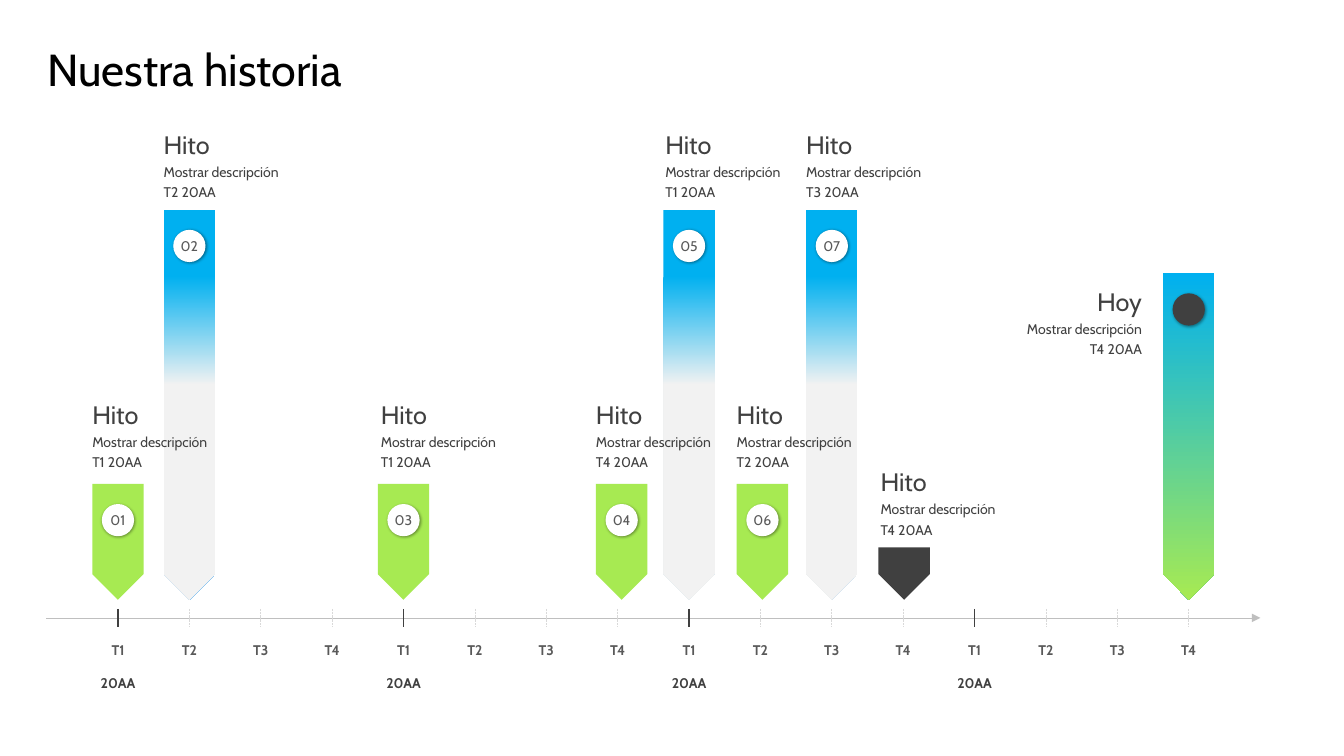
from dataclasses import dataclass

from lxml import etree
from pptx import Presentation
from pptx import util as u
from pptx.dml.color import RGBColor
from pptx.enum import dml, shapes, text
from pptx.oxml import ns


@dataclass(frozen=True)
class Theme:
    font: str = "Cabin"
    black: str = "000000"
    dark: str = "404040"
    grey: str = "595959"
    axis: str = "BFBFBF"
    tick: str = "D9D9D9"
    pale: str = "F2F2F2"
    white: str = "FFFFFF"
    blue: str = "00B0F0"
    green: str = "A7EA52"
    title: int = 32
    heading: int = 18
    body: int = 10


T = Theme()
LEFT, CENTER, RIGHT = text.PP_ALIGN.LEFT, text.PP_ALIGN.CENTER, text.PP_ALIGN.RIGHT

prs = Presentation()
prs.slide_width, prs.slide_height = u.Inches(13.33), u.Inches(7.5)
slide = prs.slides.add_slide(prs.slide_layouts[6])

# Time grid: one column per quarter
FIRST, STEP, QUARTERS = 1.17, 0.708, 16
AXIS_Y, TICK = 6.13, 0.09
ARROW_W, ARROW_TIP = 0.51, 5.95
DOT, DOT_DROP = 0.32, 0.2
LABEL_W = 1.42


def write(tf, words, size, color, align=LEFT, bold=False):
    """Fill a text frame with one run and no margins; returns its paragraph."""
    tf.margin_left = tf.margin_right = tf.margin_top = tf.margin_bottom = 0
    tf.word_wrap = True
    p = tf.paragraphs[0]
    p.alignment = align
    r = p.add_run()
    r.text = words
    r.font.name, r.font.size, r.font.bold = T.font, u.Pt(size), bold
    r.font.color.rgb = RGBColor.from_string(color)
    return p


def add_line(x1, y1, x2, y2, color, width):
    s = slide.shapes.add_connector(
        shapes.MSO_CONNECTOR.STRAIGHT, *map(u.Inches, (x1, y1, x2, y2)))
    s.line.color.rgb = RGBColor.from_string(color)
    s.line.width = u.Pt(width)
    etree.SubElement(s._element.spPr, ns.qn("a:effectLst"))
    return s


# Title
box = slide.shapes.add_textbox(*map(u.Inches, (0.47, 0.47, 12.4, 0.59)))
write(box.text_frame, "Nuestra historia", T.title, T.black).line_spacing = 0.9

# Axis, ticks and their captions
axis = add_line(0.46, AXIS_Y, 12.5, AXIS_Y, T.axis, 0.5)
etree.SubElement(axis.line._get_or_add_ln(), ns.qn("a:tailEnd"), type="triangle")

for quarter in range(QUARTERS):
    x = FIRST + quarter * STEP
    new_year = quarter % 4 == 0
    tick = add_line(x, AXIS_Y - TICK, x, AXIS_Y + TICK,
                    T.dark if new_year else T.tick, 1.25 if new_year else 0.5)
    captions = [(f"T{quarter % 4 + 1}", 6.36, T.grey)]
    if new_year:
        captions.append(("20AA", 6.69, T.dark))
    else:
        tick.line.dash_style = dml.MSO_LINE.SQUARE_DOT
    w = 0.62 if new_year else 0.45
    for words, y, color in captions:
        box = slide.shapes.add_textbox(*map(u.Inches, (x - w / 2, y, w, 0.26)))
        write(box.text_frame, words, T.body, color, CENTER, True)

# Arrow styles: top, label top, gradient stops (one stop is a solid fill)
STYLES = {
    "tall": (2.08, 1.28, [(0.17, T.blue), (0.45, T.pale)]),
    "short": (4.8, 3.96, [(0, T.green)]),
    "stub": (5.43, 4.63, [(0, T.dark)]),
    "today": (2.71, 2.84, [(0, T.blue), (1, T.green)]),
}
# Style, quarter, number, arrow nudge, label offset from the arrow
MILESTONES = [
    ("tall", 1, "02", 0, 0),
    ("short", 0, "01", 0, 0),
    ("short", 4, "03", 0, 0.03),
    ("tall", 8, "05", 0, 0.02),
    ("short", 7, "04", 0.04, 0),
    ("tall", 10, "07", 0, 0),
    ("short", 9, "06", 0.02, 0),
    ("stub", 11, None, 0.01, 0.02),
    ("today", 15, "", 0, -1.63),
]

for style, quarter, number, nudge, offset in MILESTONES:
    top, label_top, stops = STYLES[style]
    today = style == "today"
    center = FIRST + quarter * STEP + nudge
    left = center - ARROW_W / 2

    arrow = slide.shapes.add_shape(
        shapes.MSO_SHAPE.DOWN_ARROW,
        *map(u.Inches, (left, top, ARROW_W, ARROW_TIP - top)))
    arrow.adjustments[0], arrow.adjustments[1] = 1, 0.5
    arrow.line.fill.background()
    arrow.shadow.inherit = False
    if len(stops) == 1:
        arrow.fill.solid()
        arrow.fill.fore_color.rgb = RGBColor.from_string(stops[0][1])
    else:
        arrow.fill.gradient()
        arrow.fill.gradient_angle = 270
        for stop, (position, color) in zip(arrow.fill.gradient_stops, stops):
            stop.position = position
            stop.color.rgb = RGBColor.from_string(color)

    if number is not None:
        dot = slide.shapes.add_shape(
            shapes.MSO_SHAPE.OVAL,
            *map(u.Inches, (center - DOT / 2, top + DOT_DROP, DOT, DOT)))
        dot.fill.solid()
        dot.fill.fore_color.rgb = RGBColor.from_string(T.dark if today else T.white)
        dot.line.fill.background()
        dot.shadow.inherit = False
        effects = dot._element.spPr.find(ns.qn("a:effectLst"))
        shadow = etree.SubElement(
            effects, ns.qn("a:outerShdw"), blurRad=str(u.Pt(2)), dist=str(u.Pt(1)),
            dir=str(45 * 60000), algn="tl", rotWithShape="0")
        tint = etree.SubElement(shadow, ns.qn("a:srgbClr"), val=T.black)
        etree.SubElement(tint, ns.qn("a:alpha"), val="40000")
        if number:
            dot.text_frame.vertical_anchor = text.MSO_ANCHOR.MIDDLE
            write(dot.text_frame, number, T.body, T.grey, CENTER)

    label = [
        ("Hoy" if today else "Hito", 0, 0.3, T.heading),
        ("Mostrar descripción", 0.34, 0.17, T.body),
        (f"T{quarter % 4 + 1} 20AA", 0.54, 0.26, T.body),
    ]
    for words, drop, height, size in label:
        box = slide.shapes.add_textbox(
            *map(u.Inches, (left + offset, label_top + drop, LABEL_W, height)))
        write(box.text_frame, words, size, T.dark, RIGHT if today else LEFT)

prs.save("out.pptx")
